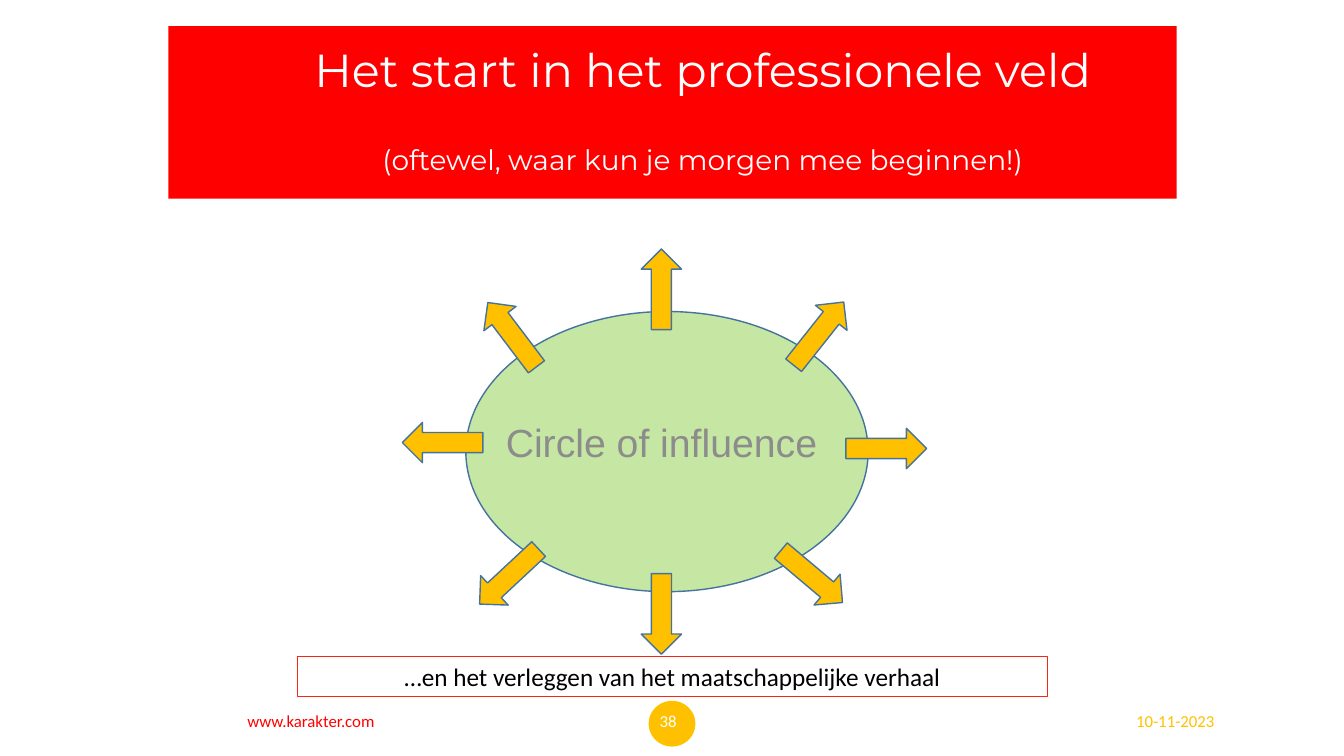
from lxml import etree
from pptx import Presentation
from pptx.dml.color import RGBColor
from pptx.enum.shapes import MSO_SHAPE
from pptx.enum.text import MSO_ANCHOR, MSO_AUTO_SIZE, PP_ALIGN
from pptx.oxml.ns import qn
from pptx.util import Inches, Pt

OVAL, RECT, ARROW = MSO_SHAPE.OVAL, MSO_SHAPE.RECTANGLE, MSO_SHAPE.UP_ARROW
LEFT, MID, RIGHT = PP_ALIGN.LEFT, PP_ALIGN.CENTER, PP_ALIGN.RIGHT
TOP, CENTER = MSO_ANCHOR.TOP, MSO_ANCHOR.MIDDLE
FIXED = MSO_AUTO_SIZE.NONE

ARROWS = [
    (6.36, 2.47, 0), (7.92, 2.91, 38.4), (8.59, 4.05, 90), (7.85, 5.32, 130.1),
    (6.36, 5.69, 180), (4.85, 5.32, 227), (4.19, 3.99, 270), (4.88, 2.92, 322.9),
]


def color(code):
    """Turn a hex string into a colour."""
    return RGBColor.from_string(code)


class Board:
    """Holds the style and the current slide."""

    red, gold, white, edge = "FF0000", "FFC000", "FFFFFF", "43739E"
    body, head, plain = "Calibri", "Montserrat", "Arial"

    def __init__(self, deck):
        """Add a title-only slide."""
        self.slide = deck.slides.add_slide(deck.slide_layouts[5])

    def style(self, para, size, font, code, align):
        """Format one paragraph and its runs."""
        para.alignment = align
        for run in para.runs:
            run.font.size = Pt(size)
            run.font.name = font
            run.font.color.rgb = color(code)

    def title(self, box, main, sub):
        """Fill the title placeholder with a heading and a subline."""
        shape = self.slide.shapes.title
        shape.left, shape.top, shape.width, shape.height = map(Inches, box)
        shape.fill.solid()
        shape.fill.fore_color.rgb = color(self.red)
        frame = shape.text_frame
        frame.auto_size = FIXED
        frame.word_wrap = True
        frame.vertical_anchor = CENTER
        frame.text = main
        first, last = frame.paragraphs[0], frame.add_paragraph()
        last.text = sub
        first._p.get_or_add_pPr().set("marL", str(Inches(0.6)))
        last.space_before = Pt(35)
        for para, size in ((first, 33), (last, 20)):
            para.line_spacing = 0.9
            self.style(para, size, self.head, self.white, MID)

    def shape(self, kind, box, fill, line, width=1, turn=0, alpha=None):
        """Draw a preset shape."""
        shape = self.slide.shapes.add_shape(kind, *map(Inches, box))
        shape.shadow.inherit = False
        shape.rotation = turn
        if fill:
            shape.fill.solid()
            shape.fill.fore_color.rgb = color(fill)
        else:
            shape.fill.background()
        if alpha:
            tint = shape._element.spPr.find(qn("a:solidFill"))[0]
            etree.SubElement(tint, qn("a:alpha")).set("val", str(alpha * 1000))
        shape.line.color.rgb = color(line)
        shape.line.width = Pt(width)
        return shape

    def letter(self, shape, text, size, font, code, align=MID, anchor=CENTER, lead=1.0):
        """Put one paragraph in a shape."""
        frame = shape.text_frame
        frame.word_wrap = True
        frame.vertical_anchor = anchor
        frame.text = text
        para = frame.paragraphs[0]
        para.line_spacing = lead
        self.style(para, size, font, code, align)

    def label(self, box, *args, **opts):
        """Add a text box."""
        self.letter(self.slide.shapes.add_textbox(*map(Inches, box)), *args, **opts)


def main():
    """Build the slide and save it."""
    deck = Presentation()
    deck.slide_width, deck.slide_height = Inches(13.33), Inches(7.5)
    board = Board(deck)
    board.title((1.67, 0.26, 10, 1.71), "Het start in het professionele veld",
                "(oftewel, waar kun je morgen mee beginnen!)")
    board.shape(OVAL, (6.44, 6.96, 0.45, 0.44), board.gold, board.gold)
    board.shape(OVAL, (4.62, 3.09, 3.99, 2.78), "92D050", board.edge, alpha=52)
    board.label((3.06, 4.19, 7, 0.51), "Circle of influence", 28, board.plain,
                "8C8C8C", anchor=TOP, lead=0.8)
    for left, top, turn in ARROWS:
        board.shape(ARROW, (left, top, 0.4, 0.8), board.gold, board.edge, turn=turn)
    note = board.shape(RECT, (2.95, 6.51, 7.44, 0.4), None, "F52717", 0.75)
    board.letter(note, "…en het verleggen van het maatschappelijke verhaal", 18,
                 board.body, "000000", anchor=TOP)
    board.label((11.17, 6.95, 1.24, 0.4), "10-11-2023", 12, board.body, board.gold, LEFT)
    board.label((0.92, 6.95, 4.33, 0.4), "www.karakter.com", 12, board.body, board.red)
    board.label((6.3, 6.94, 0.51, 0.42), "38", 12, board.body, board.white, RIGHT)
    deck.save("out.pptx")


if __name__ == "__main__":
    main()
